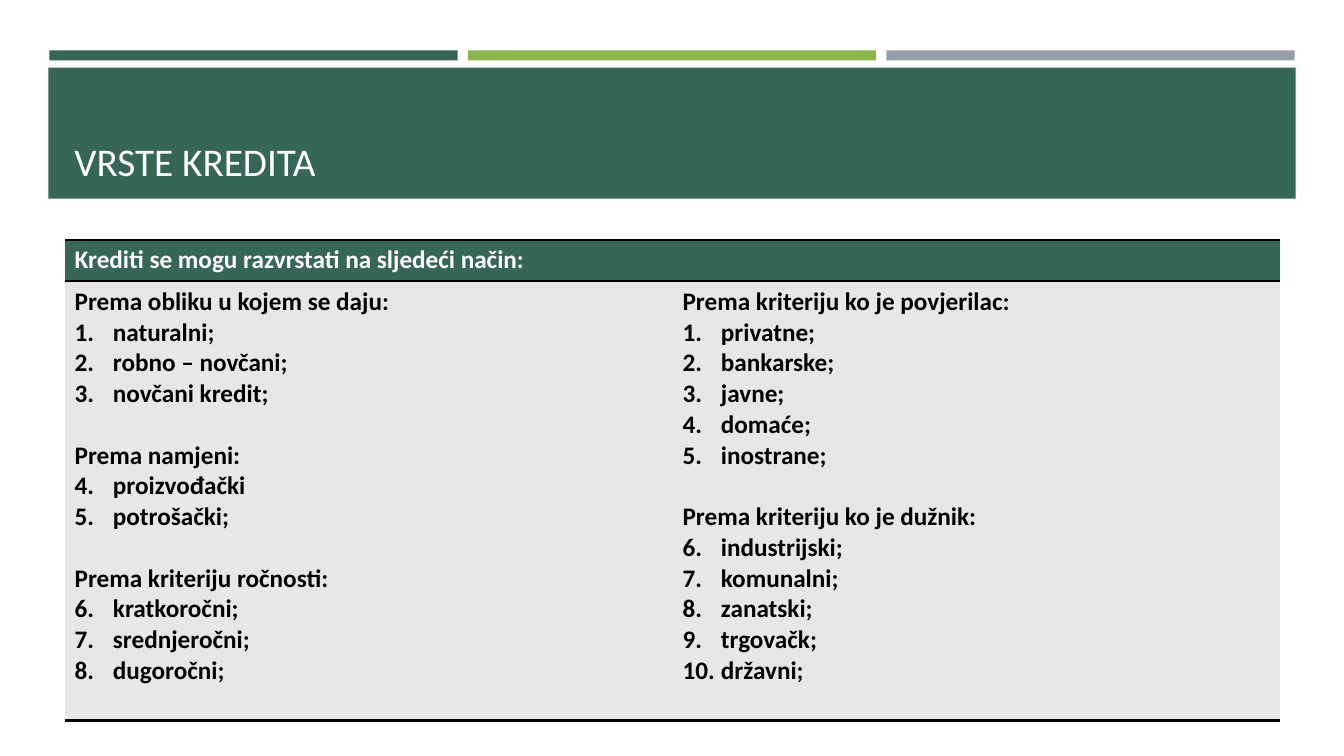
from pptx import Presentation, util as u
from pptx.dml.color import RGBColor
from pptx.enum import shapes, text
from pptx.oxml import parse_xml
from pptx.oxml.ns import nsdecls

THEME = {
    "font": "Calibri", "title": 28, "body": 18, "gap": 22,
    "green": "366658", "lime": "8CB64A", "grey": "969FA7",
    "pale": "E7E7E7", "white": "FFFFFF", "black": "000000",
}
INDENT = u.Inches(0.38)


def color(name):
    return RGBColor.from_string(THEME[name])


def style(para, size, tint, bold):
    font = para.runs[0].font
    font.name, font.size, font.bold = THEME["font"], u.Pt(THEME[size]), bold
    font.color.rgb = color(tint)


deck = Presentation()
deck.slide_width, deck.slide_height = u.Inches(13.33), u.Inches(7.5)
slide = deck.slides.add_slide(deck.slide_layouts[6])

# Three accent bars, then the title band
left, top, wide, step = 0.49, 0.5, 4.05, 4.15
bars = [(left + i * step, top, wide, 0.1, tint)
        for i, tint in enumerate(["green", "lime", "grey"])]
for x, y, w, h, tint in bars + [(0.48, 0.67, 12.37, 1.3, "green")]:
    bar = slide.shapes.add_shape(shapes.MSO_SHAPE.RECTANGLE,
                                 *map(u.Inches, (x, y, w, h)))
    bar.shadow.inherit = False
    bar.fill.solid()
    bar.fill.fore_color.rgb = color(tint)
    bar.line.fill.background()

# Title
edge, span = 0.64, 12.06
title = slide.shapes.add_textbox(*map(u.Inches, (edge, 0.77, span, 1.11)))
frame = title.text_frame
frame.word_wrap = True
frame.vertical_anchor = text.MSO_ANCHOR.BOTTOM
frame.text = "VRSTE KREDITA"
style(frame.paragraphs[0], "title", "white", False)

# Table with a heading row and two columns of credit types
heads = ["Krediti se mogu razvrstati na sljedeći način:", ""]
groups = [
    [("Prema obliku u kojem se daju:",
      ["naturalni;", "robno – novčani;", "novčani kredit;"]),
     ("Prema namjeni:", ["proizvođački", "potrošački;"]),
     ("Prema kriteriju ročnosti:",
      ["kratkoročni;", "srednjeročni;", "dugoročni;"])],
    [("Prema kriteriju ko je povjerilac:",
      ["privatne;", "bankarske;", "javne;", "domaće;", "inostrane;"]),
     ("Prema kriteriju ko je dužnik:",
      ["industrijski;", "komunalni;", "zanatski;", "trgovačk;", "državni;"])],
]
rows = [0.41, 4.36]
holder = slide.shapes.add_table(
    2, 2, *map(u.Inches, (edge, 2.38, span, sum(rows))))
table = holder.table
table.horz_banding = False
table._tbl.tblPr[0].text = "{2D5ABB26-0587-4C30-8999-92F81FD0307C}"
for row, high in zip(table.rows, rows):
    row.height = u.Inches(high)

# Cell fills and horizontal rules
for r, (tint, sides) in enumerate([("green", "TB"), ("pale", "TB")]):
    for cell in table.rows[r].cells:
        cell.fill.solid()
        cell.fill.fore_color.rgb = color(tint)
        for i, side in enumerate(sides):
            cell._tc.tcPr.insert(i, parse_xml(
                f'<a:ln{side} {nsdecls("a")} w="{u.Pt(2)}"><a:solidFill>'
                f'<a:srgbClr val="{THEME["black"]}"/></a:solidFill></a:ln{side}>'))

# Heading text
for cell, head in zip(table.rows[0].cells, heads):
    if head:
        cell.text_frame.text = head
        style(cell.text_frame.paragraphs[0], "body", "white", True)

# Grouped lists, numbered on through each column
for cell, column in zip(table.rows[1].cells, groups):
    frame = cell.text_frame
    count = 0
    for g, (name, items) in enumerate(column):
        para = frame.add_paragraph() if g else frame.paragraphs[0]
        para.text = name
        para.space_before = u.Pt(THEME["gap"] if g else 0)
        style(para, "body", "black", True)
        first = count + 1
        for item in items:
            count += 1
            para = frame.add_paragraph()
            para.text = item
            style(para, "body", "black", True)
            props = para._p.get_or_add_pPr()
            props.set("marL", str(INDENT))
            props.set("indent", str(-INDENT))
            props.append(parse_xml(
                f'<a:buFont {nsdecls("a")} typeface="+mj-lt"/>'))
            props.append(parse_xml(
                f'<a:buAutoNum {nsdecls("a")} type="arabicPeriod" startAt="{first}"/>'))

deck.save("out.pptx")
